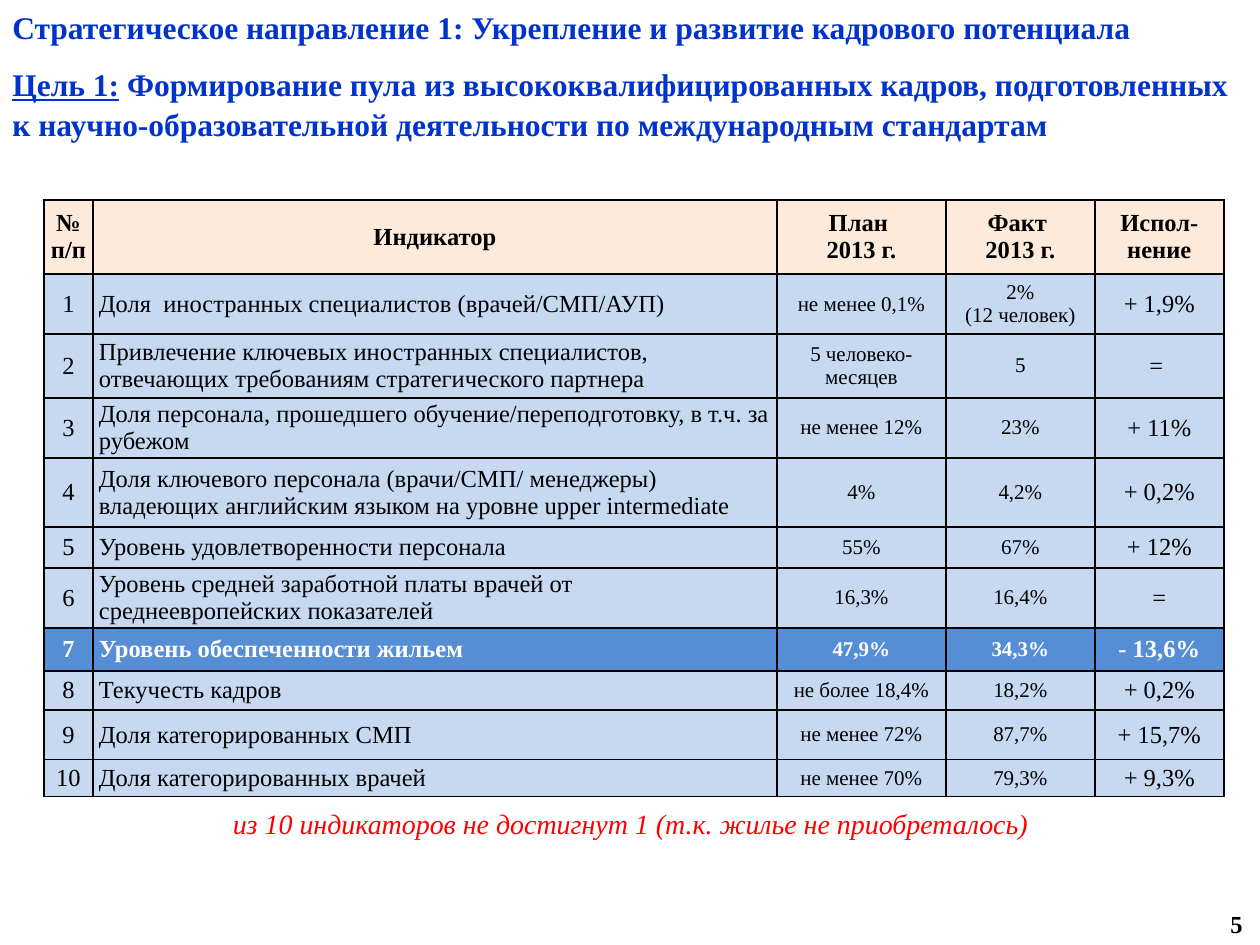
from dataclasses import dataclass

from lxml import etree
from pptx import Presentation
from pptx.dml.color import RGBColor
from pptx.enum.text import MSO_ANCHOR, PP_ALIGN
from pptx.oxml.ns import qn
from pptx.util import Emu, Pt

LEFT, CENTER, RIGHT = PP_ALIGN.LEFT, PP_ALIGN.CENTER, PP_ALIGN.RIGHT
TOP, MIDDLE = MSO_ANCHOR.TOP, MSO_ANCHOR.MIDDLE

PX_PER_INCH = 126
FONT = "Times New Roman"
COLORS = {
    "title": "0033CC",
    "text": "000000",
    "header": "FDEADA",
    "row": "C6D9F1",
    "missed": "558ED5",
    "missed_text": "FFFFFF",
    "note": "FF0000",
    "border": "000000",
}


@dataclass(frozen=True)
class Indicator:
    height: int
    name: str
    plan: str
    fact: str
    result: str
    missed: bool = False


HEADER_HEIGHT = 74
HEADERS = ["№ п/п", "Индикатор", "План \n2013 г.", "Факт \n2013 г.", "Испол-нение"]
COLUMN_WIDTHS = [49, 684, 169, 149, 129]
COLUMN_ALIGNS = [CENTER, LEFT, CENTER, CENTER, CENTER]
COLUMN_SIZES = [14, 14, 12, 12, 14]

INDICATORS = [
    Indicator(60, "Доля  иностранных специалистов (врачей/СМП/АУП)",
              "не менее 0,1%", "2%\n(12 человек)", "+ 1,9%"),
    Indicator(64, "Привлечение ключевых иностранных специалистов, "
              "отвечающих требованиям стратегического партнера",
              "5 человеко-\nмесяцев", "5", "= "),
    Indicator(60, "Доля персонала, прошедшего обучение/переподготовку, "
              "в т.ч. за рубежом", "не менее 12%", "23%", "+ 11%"),
    Indicator(69, "Доля ключевого персонала (врачи/СМП/ менеджеры) "
              "владеющих английским языком на уровне upper intermediate",
              "4%", "4,2%", "+ 0,2%"),
    Indicator(41, "Уровень удовлетворенности персонала", "55%", "67%", "+ 12%"),
    Indicator(60, "Уровень средней заработной платы врачей от "
              "среднеевропейских показателей", "16,3%", "16,4%", "="),
    Indicator(43, "Уровень обеспеченности жильем",
              "47,9%", "34,3%", " - 13,6% ", missed=True),
    Indicator(39, "Текучесть кадров", "не более 18,4%", "18,2%", "+ 0,2%"),
    Indicator(50, "Доля категорированных СМП", "не менее 72%", "87,7%", "+ 15,7%"),
    Indicator(37, "Доля категорированных врачей", "не менее 70%", "79,3%", "+ 9,3%"),
]


def px(value: int) -> Emu:
    return Emu(round(value * 914400 / PX_PER_INCH))


def add_span(para, text: str, *, size: int, color: str = "text", bold: bool = False,
             italic: bool = False, underline: bool = False) -> None:
    span = para.add_run()
    span.text = text
    font = span.font
    font.name, font.size = FONT, Pt(size)
    font.bold, font.italic, font.underline = bold, italic, underline
    font.color.rgb = RGBColor.from_string(COLORS[color])


def write(frame, text: str, *, align=LEFT, **style) -> None:
    """Write each line of the text as a paragraph."""
    for index, line in enumerate(text.split("\n")):
        para = frame.add_paragraph() if index else frame.paragraphs[0]
        para.alignment = align
        add_span(para, line, **style)


def add_box(page, left: int, top: int, width: int, height: int, anchor=TOP):
    box = page.shapes.add_textbox(px(left), px(top), px(width), px(height))
    frame = box.text_frame
    frame.word_wrap = True
    frame.vertical_anchor = anchor
    return frame


def set_borders(cell) -> None:
    properties = cell._tc.get_or_add_tcPr()
    for index, side in enumerate(("a:lnL", "a:lnR", "a:lnT", "a:lnB")):
        line = etree.Element(qn(side), w=str(Pt(1)))
        fill = etree.SubElement(line, qn("a:solidFill"))
        etree.SubElement(fill, qn("a:srgbClr"), val=COLORS["border"])
        properties.insert(index, line)


def fill_cell(cell, text: str, fill: str, **style) -> None:
    cell.margin_left = cell.margin_right = px(6)
    cell.margin_top = cell.margin_bottom = 0
    cell.vertical_anchor = MIDDLE
    cell.fill.solid()
    cell.fill.fore_color.rgb = RGBColor.from_string(COLORS[fill])
    set_borders(cell)
    write(cell.text_frame, text, **style)


def add_indicator_table(page, left: int, top: int) -> None:
    heights = [HEADER_HEIGHT] + [item.height for item in INDICATORS]
    table = page.shapes.add_table(
        len(heights), len(COLUMN_WIDTHS), px(left), px(top),
        px(sum(COLUMN_WIDTHS)), px(sum(heights))).table
    table.first_row = table.horz_banding = False
    for column, width in zip(table.columns, COLUMN_WIDTHS):
        column.width = px(width)
    for row, height in zip(table.rows, heights):
        row.height = px(height)

    for column, text in enumerate(HEADERS):
        fill_cell(table.cell(0, column), text, "header",
                  align=CENTER, size=14, bold=True)
    for number, item in enumerate(INDICATORS, start=1):
        values = [str(number), item.name, item.plan, item.fact, item.result]
        for column, text in enumerate(values):
            fill_cell(table.cell(number, column), text,
                      "missed" if item.missed else "row",
                      align=COLUMN_ALIGNS[column], size=COLUMN_SIZES[column],
                      color="missed_text" if item.missed else "text",
                      bold=item.missed)


def main() -> None:
    deck = Presentation()
    deck.slide_width, deck.slide_height = px(1260), px(945)
    page = deck.slides.add_slide(deck.slide_layouts[6])

    # Direction and goal
    heading = add_box(page, 0, 0, 1260, 144)
    title_style = {"size": 18, "color": "title", "bold": True}
    write(heading, "Стратегическое направление 1: Укрепление и развитие "
          "кадрового потенциала", **title_style)
    goal = heading.add_paragraph()
    goal.space_before = Pt(10)
    add_span(goal, "Цель 1:", underline=True, **title_style)
    add_span(goal, " Формирование пула из высококвалифицированных кадров, "
             "подготовленных к научно-образовательной деятельности "
             "по международным стандартам", **title_style)
    for para in heading.paragraphs:
        para.line_spacing = 1.05

    # Indicators
    add_indicator_table(page, 44, 200)

    # Conclusion and page number
    write(add_box(page, 44, 800, 1180, 47),
          "из 10 индикаторов не достигнут 1 (т.к. жилье не приобреталось) ",
          align=CENTER, size=16, color="note", italic=True)
    write(add_box(page, 961, 899, 294, 50, anchor=MIDDLE), "5",
          align=RIGHT, size=14, bold=True)

    deck.save("out.pptx")


if __name__ == "__main__":
    main()
